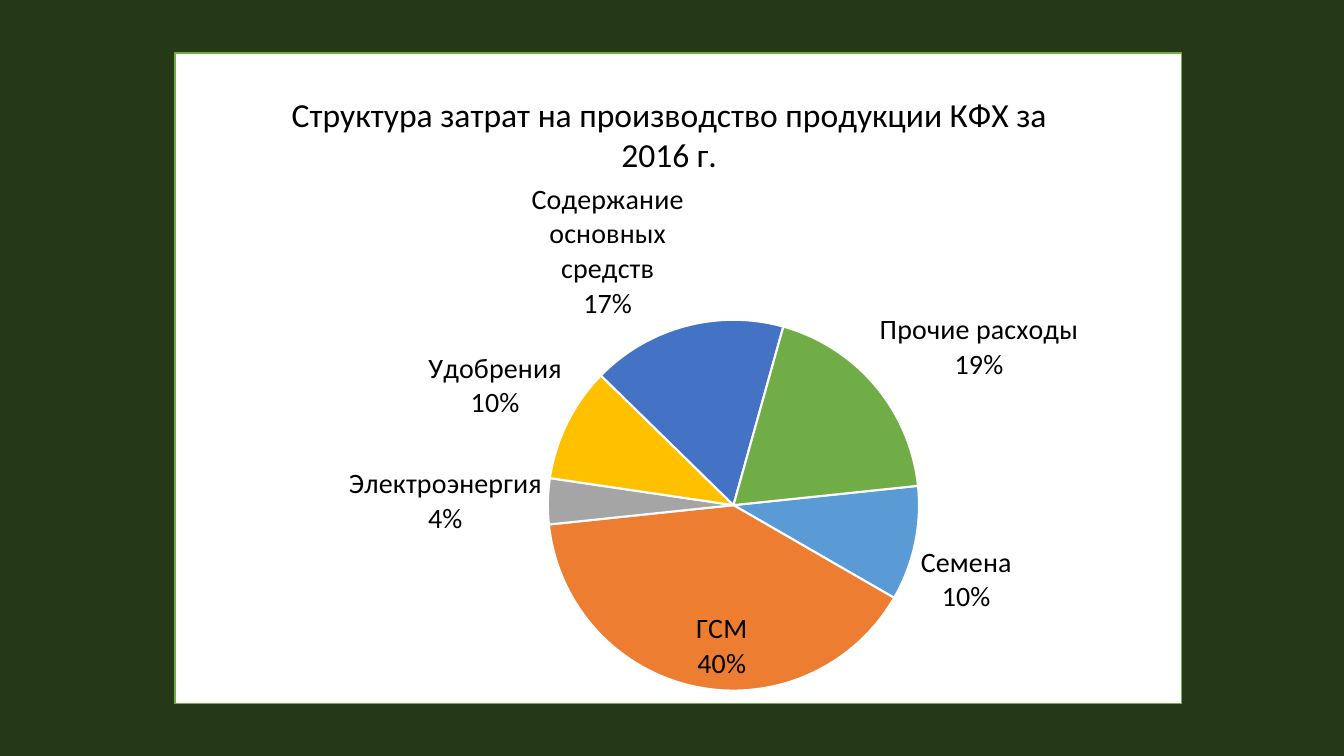
import pptx
import pptx.chart.data
import pptx.dml.color
import pptx.enum.chart
import pptx.oxml
import pptx.oxml.ns
import pptx.util
from pptx.util import Cm, Pt

TITLE = "Структура затрат на производство продукции КФХ за 2016 г."
COSTS = [  # category, share in percent, colour name
    ("Семена", 10, "sky"),
    ("ГСМ", 40, "orange"),
    ("Электроэнергия", 4, "gray"),
    ("Удобрения", 10, "gold"),
    ("Содержание основных средств", 17, "blue"),
    ("Прочие расходы", 19, "green"),
]
INSIDE = "ГСМ"
FONT = "Calibri"
COLORS = {
    "background": "253917", "panel": "FFFFFF", "text": "000000",
    "sky": "5B9BD5", "orange": "ED7D31", "gray": "A5A5A5",
    "gold": "FFC000", "blue": "4472C4", "green": "70AD47",
}
CHART_BOX = (Cm(4.39), Cm(1.32), Cm(25.4), Cm(16.43))
TITLE_PLACE = {"x": 0.11, "y": 0.05}
PIE_PLACE = {"x": 0.37, "y": 0.41, "w": 0.37, "h": 0.57}
START_ANGLE = 84
POSITION = pptx.enum.chart.XL_LABEL_POSITION
qn = pptx.oxml.ns.qn


def rgb(name):
    return pptx.dml.color.RGBColor.from_string(COLORS[name])


def parse_chart_xml(xml):
    """Parse one element whose tag uses the c: or a: prefix."""
    ns = pptx.oxml.ns.nsdecls("c", "a")
    head, tail = xml.split(">", 1)
    return pptx.oxml.parse_xml(f"{head} {ns}>{tail}")


def set_font(font, size):
    font.name, font.size, font.bold = FONT, Pt(size), False
    font.color.rgb = rgb("text")


def place(parent, index, fractions, target=""):
    """Set a manual layout, in fractions of the chart area."""
    for old in parent.findall(qn("c:layout")):
        parent.remove(old)
    modes = "".join(f'<c:{k}Mode val="edge"/>' for k in "xy")
    sizes = "".join(f'<c:{k} val="{v}"/>' for k, v in fractions.items())
    parent.insert(index, parse_chart_xml(
        f"<c:layout><c:manualLayout>{target}{modes}{sizes}</c:manualLayout></c:layout>"))


def show_category_and_percent(labels):
    """Switch a c:dLbls or c:dLbl element to category and percent on two lines."""
    flags = {"showVal": 0, "showCatName": 1, "showSerName": 0, "showPercent": 1}
    for tag, value in flags.items():
        labels.find(qn(f"c:{tag}")).set("val", str(value))
    last = labels.find(qn("c:showBubbleSize"))
    if last is None:
        last = labels.find(qn("c:showPercent"))
    last.addnext(parse_chart_xml("<c:separator>\n</c:separator>"))


def add_cost_chart(slide):
    data = pptx.chart.data.CategoryChartData()
    data.categories = [name for name, _, _ in COSTS]
    data.add_series("Series 1", [share for _, share, _ in COSTS])
    chart = slide.shapes.add_chart(
        pptx.enum.chart.XL_CHART_TYPE.PIE, *CHART_BOX, data).chart
    chart.has_legend = False
    set_font(chart.font, 20)

    chart.has_title = True
    tf = chart.chart_title.text_frame
    tf.text = TITLE
    set_font(tf.paragraphs[0].runs[0].font, 24)
    place(chart.chart_title._element, 1, TITLE_PLACE)

    plot = chart.plots[0]
    plot.vary_by_categories = True
    pie = plot._element
    place(pie.getparent(), 0, PIE_PLACE, '<c:layoutTarget val="inner"/>')
    angle = pie.find(qn("c:firstSliceAng"))
    if angle is None:
        angle = parse_chart_xml("<c:firstSliceAng></c:firstSliceAng>")
        pie.append(angle)
    angle.set("val", str(START_ANGLE))

    series = plot.series[0]
    labels = series.data_labels
    labels.number_format, labels.number_format_is_linked = "0%", False
    labels.position = POSITION.OUTSIDE_END
    set_font(labels.font, 20)
    show_category_and_percent(labels._element)
    for i, (name, _, color) in enumerate(COSTS):
        point = series.points[i]
        point.format.fill.solid()
        point.format.fill.fore_color.rgb = rgb(color)
        point.format.line.color.rgb = rgb("panel")
        point.format.line.width = Pt(1.5)
        if name == INSIDE:
            set_font(point.data_label.font, 20)
            point.data_label.position = POSITION.INSIDE_END
            show_category_and_percent(labels._element.find(qn("c:dLbl")))

    chart._chartSpace.find(qn("c:chart")).addnext(parse_chart_xml(
        f'<c:spPr><a:solidFill><a:srgbClr val="{COLORS["panel"]}"/></a:solidFill>'
        f'<a:ln w="{Pt(1)}"><a:solidFill><a:srgbClr val="{COLORS["green"]}"/>'
        "</a:solidFill></a:ln></c:spPr>"))


def main():
    prs = pptx.Presentation()
    prs.slide_width, prs.slide_height = Cm(33.87), Cm(19.05)
    slide = prs.slides.add_slide(prs.slide_layouts[6])
    slide.background.fill.solid()
    slide.background.fill.fore_color.rgb = rgb("background")
    add_cost_chart(slide)
    prs.save("out.pptx")


if __name__ == "__main__":
    main()
